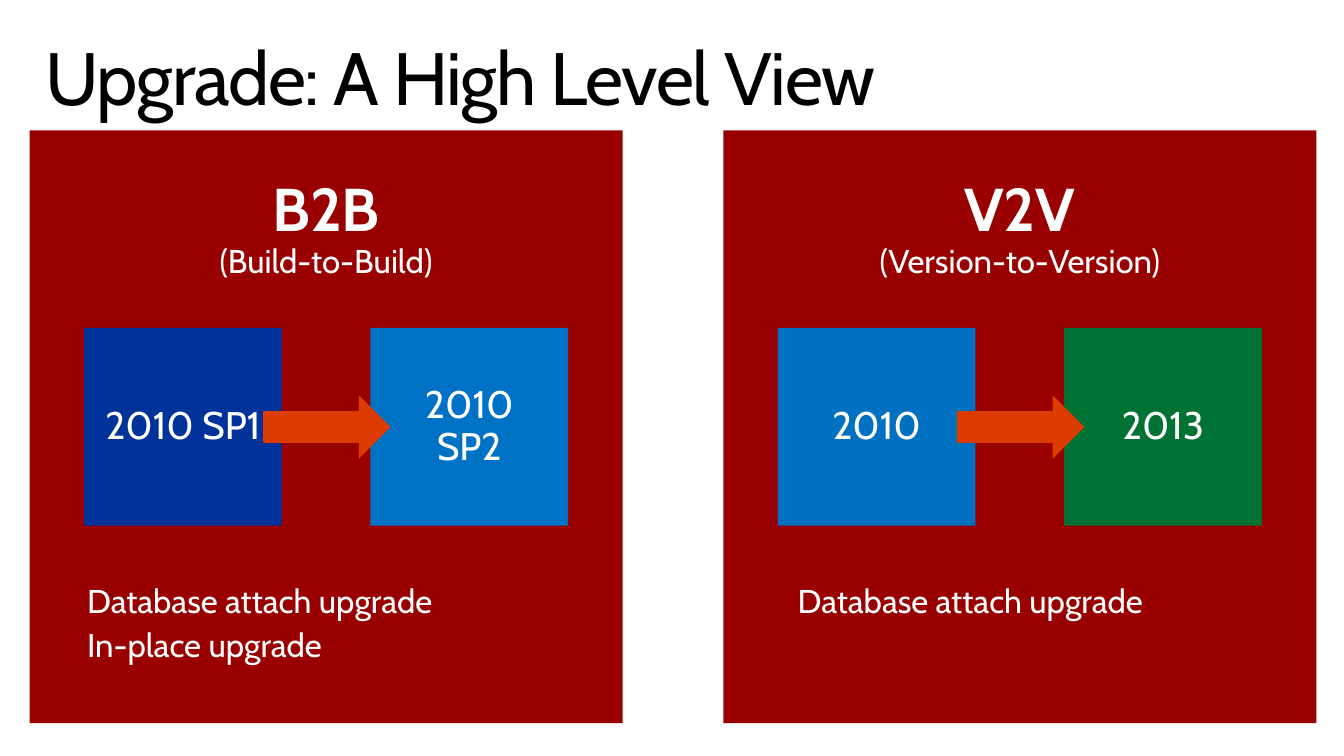
from pptx import Presentation
from pptx.dml.color import RGBColor
from pptx.enum.shapes import MSO_SHAPE
from pptx.enum.text import MSO_ANCHOR, MSO_AUTO_SIZE, PP_ALIGN
from pptx.util import Cm, Pt

RECTANGLE, RIGHT_ARROW = MSO_SHAPE.RECTANGLE, MSO_SHAPE.RIGHT_ARROW
TOP, MIDDLE = MSO_ANCHOR.TOP, MSO_ANCHOR.MIDDLE
LEFT, CENTER = PP_ALIGN.LEFT, PP_ALIGN.CENTER
FIT_SHAPE = MSO_AUTO_SIZE.SHAPE_TO_FIT_TEXT

FONT = "Cabin"
COLORS = {
    "text": "000000",
    "light": "FFFFFF",
    "panel": "990000",
    "navy": "003399",
    "blue": "0072C6",
    "sky": "0070C0",
    "green": "007233",
    "arrow": "DC3C00",
}
PANEL_SIZE = 15.24
TILE_SIZE = 5.08
PANELS = [
    {
        "left": 0.76, "name": "B2B", "meaning": "(Build-to-Build)",
        "tiles": [("2010 SP1", "navy"), ("2010 SP2", "blue")],
        "notes": ["Database attach upgrade", "In-place upgrade"],
        "notes_indent": 0.97, "notes_height": 2.87,
    },
    {
        "left": 18.59, "name": "V2V", "meaning": "(Version-to-Version)",
        "tiles": [("2010", "sky"), ("2013", "green")],
        "notes": ["Database attach upgrade"],
        "notes_indent": 1.4, "notes_height": 1.75,
    },
]


def add_block(shapes, kind, left, top, width, height, color):
    """Add a filled preset shape without line or shadow."""
    shape = shapes.add_shape(kind, Cm(left), Cm(top), Cm(width), Cm(height))
    shape.shadow.inherit = False
    shape.fill.solid()
    shape.fill.fore_color.rgb = RGBColor.from_string(COLORS[color])
    shape.line.fill.background()
    return shape


def prepare_frame(shape, anchor=TOP, side=0.51, top=0.41, bottom=0.41):
    frame = shape.text_frame
    frame.word_wrap = True
    frame.vertical_anchor = anchor
    frame.margin_left = frame.margin_right = Cm(side)
    frame.margin_top, frame.margin_bottom = Cm(top), Cm(bottom)
    return frame


def format_paragraph(paragraph, alignment):
    paragraph.alignment = alignment
    paragraph.line_spacing = 0.9


def add_run(paragraph, text, size, color="light", bold=False):
    run = paragraph.add_run()
    run.text = text
    run.font.name = FONT
    run.font.size = Pt(size)
    run.font.bold = bold
    run.font.color.rgb = RGBColor.from_string(COLORS[color])
    return run


def add_title(slide, left, top, width, height):
    box = slide.shapes.add_textbox(Cm(left), Cm(top), Cm(width), Cm(height))
    paragraph = prepare_frame(box, side=0.41, top=0.25, bottom=0.25).paragraphs[0]
    format_paragraph(paragraph, LEFT)
    run = add_run(paragraph, "Upgrade: A High Level View", 54, "text")
    run._r.get_or_add_rPr().set("spc", "-100")


def add_tile(shapes, left, top, label, color):
    tile = add_block(shapes, RECTANGLE, left, top, TILE_SIZE, TILE_SIZE, color)
    paragraph = prepare_frame(tile, MIDDLE).paragraphs[0]
    format_paragraph(paragraph, CENTER)
    add_run(paragraph, label, 28)


def add_notes(slide, left, top, width, height, notes):
    box = slide.shapes.add_textbox(Cm(left), Cm(top), Cm(width), Cm(height))
    frame = prepare_frame(box)
    frame.word_wrap = False
    frame.auto_size = FIT_SHAPE
    for index, note in enumerate(notes):
        paragraph = frame.add_paragraph() if index else frame.paragraphs[0]
        format_paragraph(paragraph, LEFT)
        paragraph.space_after = Pt(6)
        add_run(paragraph, note, 24)


def add_panel(slide, left, top, size, panel):
    """Add one upgrade type: heading, from-to tiles, arrow and notes."""
    shapes = slide.shapes.add_group_shape().shapes
    background = add_block(shapes, RECTANGLE, left, top, size, size, "panel")
    heading = prepare_frame(background, top=1.27).paragraphs[0]
    format_paragraph(heading, CENTER)
    add_run(heading, panel["name"], 44, bold=True)
    heading.add_line_break()
    add_run(heading, panel["meaning"], 24)

    margin = 1.4
    tile_lefts = (left + margin, left + size - margin - TILE_SIZE)
    for tile_left, (label, color) in zip(tile_lefts, panel["tiles"]):
        add_tile(shapes, tile_left, top + TILE_SIZE, label, color)
    add_block(shapes, RIGHT_ARROW, left + 6, top + 6.81, 3.28, 1.63, "arrow")
    add_notes(slide, left + panel["notes_indent"], top + 11.28,
              10.52, panel["notes_height"], panel["notes"])


def main():
    presentation = Presentation()
    presentation.slide_width, presentation.slide_height = Cm(34.54), Cm(19.43)
    slide = presentation.slides.add_slide(presentation.slide_layouts[6])
    add_title(slide, 0.76, 0.81, 33.02, 2.54)
    for panel in PANELS:
        add_panel(slide, panel["left"], 3.35, PANEL_SIZE, panel)
    presentation.save("out.pptx")


if __name__ == "__main__":
    main()
